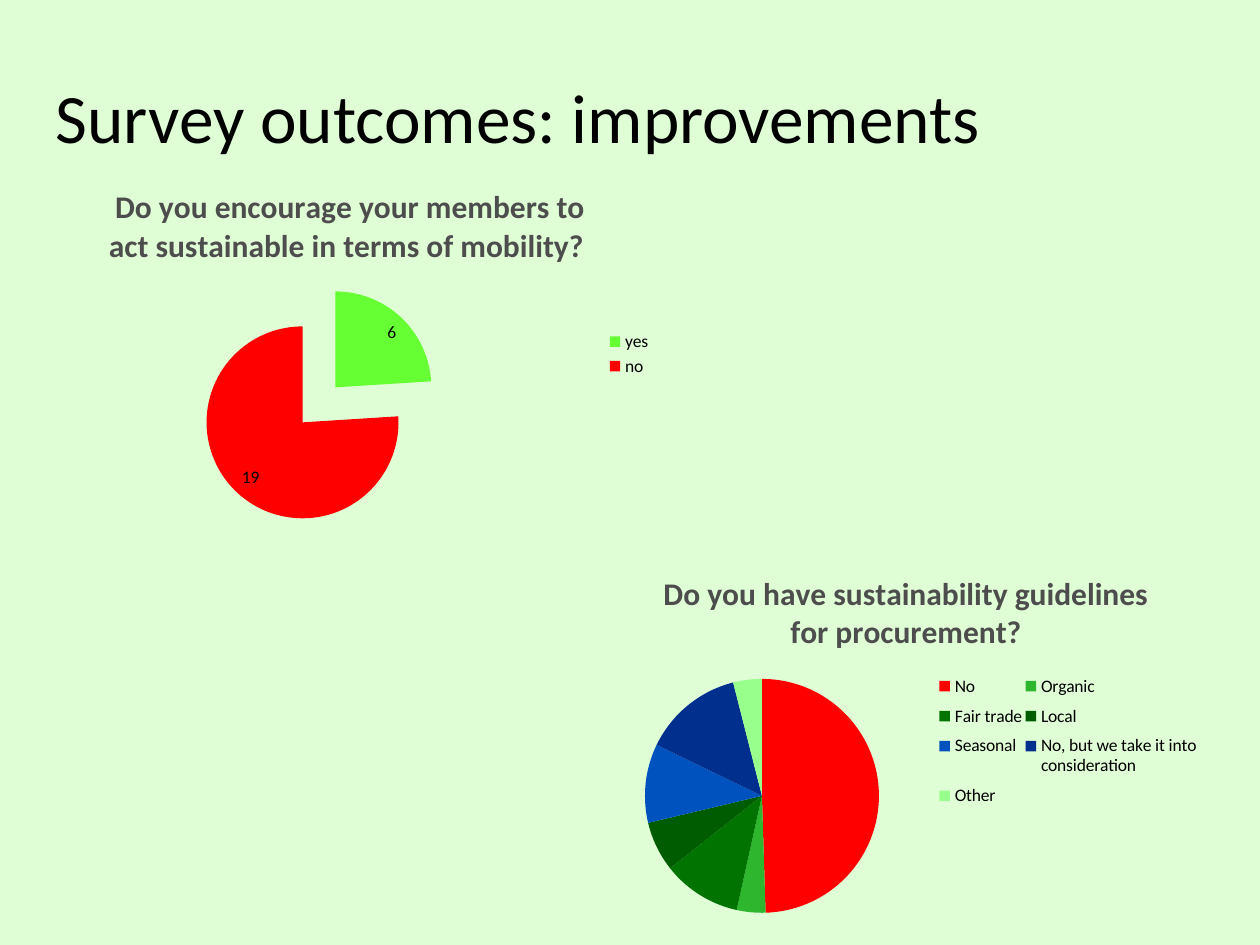
import pptx
import pptx.chart.data
import pptx.dml.color
import pptx.enum.chart
import pptx.enum.text
import pptx.oxml
import pptx.oxml.ns
import pptx.util

RGBColor = pptx.dml.color.RGBColor
qn = pptx.oxml.ns.qn

PX = 914400 // 126
FONT = "Calibri"
BACKGROUND = RGBColor(0xE0, 0xFE, 0xD6)
BLACK = RGBColor(0x00, 0x00, 0x00)
GREY = RGBColor(0x4D, 0x4D, 0x4D)
RED = RGBColor(0xFF, 0x00, 0x00)
LIME = RGBColor(0x66, 0xFF, 0x33)
GREEN = RGBColor(0x2E, 0xB7, 0x2E)
DARK_GREEN = RGBColor(0x00, 0x73, 0x00)
FOREST = RGBColor(0x00, 0x5C, 0x00)
BLUE = RGBColor(0x00, 0x52, 0xBE)
NAVY = RGBColor(0x00, 0x2F, 0x8E)
PALE_GREEN = RGBColor(0x99, 0xFF, 0x8C)

CHART_SIZE = (630, 378)
MOBILITY = [("yes", 6, LIME), ("no", 19, RED)]
PROCUREMENT = [
    ("No", 50, RED),
    ("Organic", 4, GREEN),
    ("Fair trade", 11, DARK_GREEN),
    ("Local", 7, FOREST),
    ("Seasonal", 11, BLUE),
    ("No, but we take it into consideration", 14, NAVY),
    ("Other", 4, PALE_GREEN),
]


def scale(*lengths):
    return [pptx.util.Emu(length * PX) for length in lengths]


def style(font, size, color, bold=False):
    font.name = FONT
    font.size = pptx.util.Pt(size)
    font.bold = bold
    font.color.rgb = color


def chart_element(tag, value):
    return pptx.oxml.parse_xml(
        f'<c:{tag} {pptx.oxml.ns.nsdecls("c")} val="{value}"/>')


def set_layout(parent, index, box, inner=False):
    """Fix the place of a chart part; box is in px from the chart's corner."""
    for old in parent.findall(qn("c:layout")):
        parent.remove(old)
    layout = pptx.oxml.parse_xml(
        f'<c:layout {pptx.oxml.ns.nsdecls("c")}><c:manualLayout/></c:layout>')
    entries = [("layoutTarget", "inner")] if inner else []
    entries += [("xMode", "edge"), ("yMode", "edge")]
    entries += [(name, round(length / CHART_SIZE[i % 2], 4))
                for i, (name, length) in enumerate(zip("xywh", box))]
    for tag, value in entries:
        layout[0].append(chart_element(tag, value))
    parent.insert(index, layout)


def add_title(page, box, text):
    title = page.shapes.title
    title.left, title.top, title.width, title.height = scale(*box)
    frame = title.text_frame
    frame.vertical_anchor = pptx.enum.text.MSO_ANCHOR.MIDDLE
    para = frame.paragraphs[0]
    para.alignment = pptx.enum.text.PP_ALIGN.CENTER
    span = para.add_run()
    span.text = text
    style(span.font, 39.6, BLACK)


def add_pie(page, left, top, question, slices, pie_box, legend_box,
            explosion=0, labels=False):
    names, values, colors = zip(*slices)
    data = pptx.chart.data.CategoryChartData()
    data.categories = names
    data.add_series("Series 1", values)
    chart = page.shapes.add_chart(
        pptx.enum.chart.XL_CHART_TYPE.PIE,
        *scale(left, top, *CHART_SIZE), data).chart
    style(chart.font, 10, BLACK)

    chart.has_title = True
    span = chart.chart_title.text_frame.paragraphs[0].add_run()
    span.text = question
    style(span.font, 18, GREY, bold=True)

    chart.has_legend = True
    chart.legend.position = pptx.enum.chart.XL_LEGEND_POSITION.RIGHT
    chart.legend.include_in_layout = False
    style(chart.legend.font, 10, BLACK)
    set_layout(chart.legend._element, 1, legend_box)
    set_layout(chart.plots[0]._element.getparent(), 0, pie_box, inner=True)

    plot = chart.plots[0]
    plot.vary_by_categories = True
    series = plot.series[0]
    if explosion:
        series._element.find(qn("c:tx")).addnext(
            chart_element("explosion", explosion))
    for index, color in enumerate(colors):
        point = series.points[index]
        point.format.fill.solid()
        point.format.fill.fore_color.rgb = color
        point.format.line.fill.background()
    if labels:
        plot.has_data_labels = True
        plot.data_labels.show_value = True
        plot.data_labels.show_percentage = False
        plot.data_labels.position = (
            pptx.enum.chart.XL_LABEL_POSITION.INSIDE_END)
        style(plot.data_labels.font, 10, BLACK)


def main():
    deck = pptx.Presentation()
    deck.slide_width, deck.slide_height = scale(1260, 945)
    page = deck.slides.add_slide(deck.slide_layouts[5])
    page.background.fill.solid()
    page.background.fill.fore_color.rgb = BACKGROUND

    add_title(page, (0, 37, 1036, 158), "Survey outcomes: improvements")
    add_pie(page, 35, 165,
            "Do you encourage your members to act sustainable in terms of mobility? ",
            MOBILITY, (164, 120, 240, 240), (568, 162, 52, 54),
            explosion=25, labels=True)
    # The legend is too narrow for its longest entry, so it wraps in two columns.
    add_pie(page, 591, 552,
            "Do you have sustainability guidelines for procurement?",
            PROCUREMENT, (54, 127, 234, 234), (345, 114, 264, 150))
    deck.save("out.pptx")


if __name__ == "__main__":
    main()
